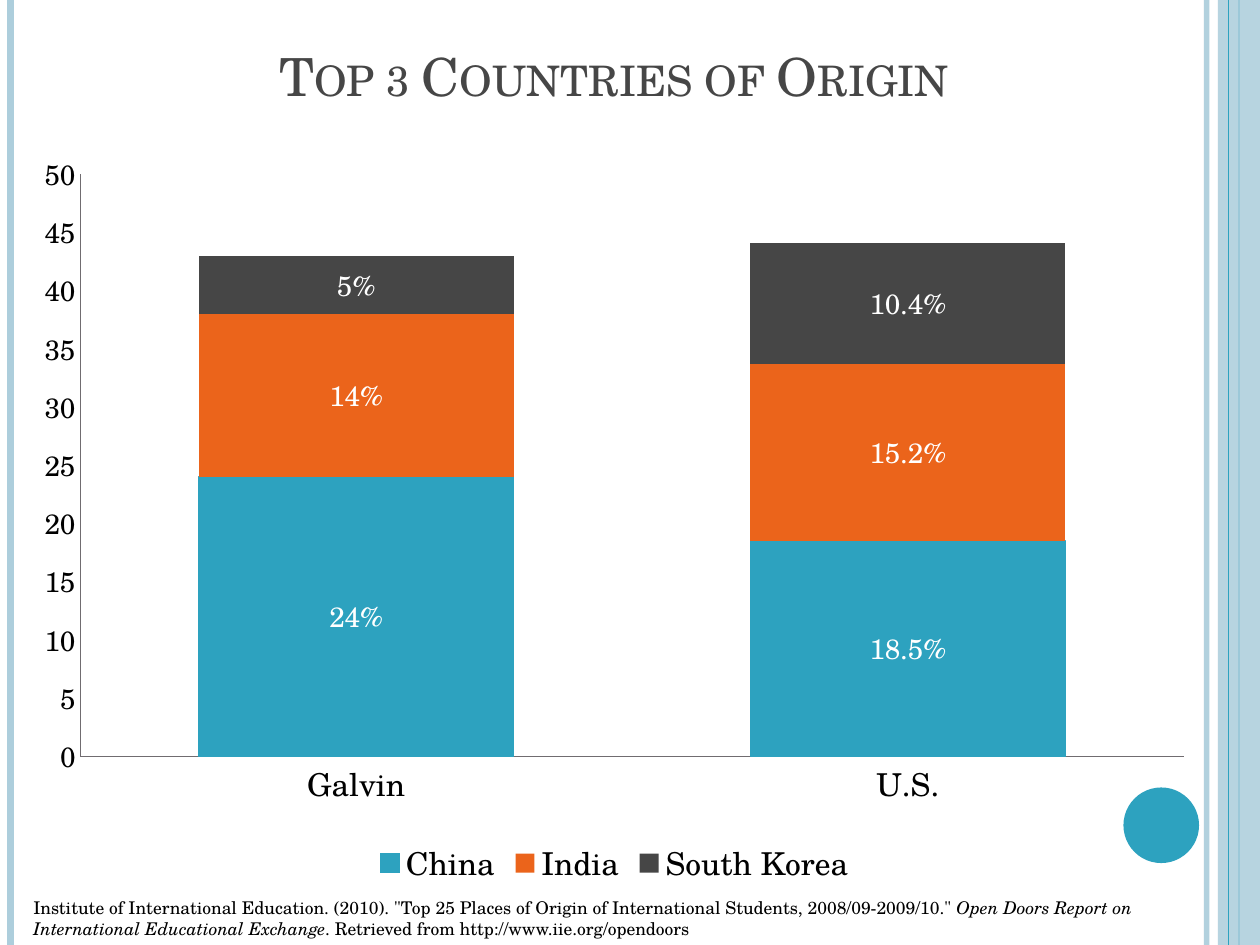
from lxml import etree
from pptx import Presentation
from pptx.chart.data import CategoryChartData
from pptx.dml.color import RGBColor
from pptx.enum import chart as charts, shapes, text
from pptx.oxml import parse_xml
from pptx.oxml.ns import nsdecls, qn
from pptx.util import Pt

FONT = "TeX Gyre Schola"
PALE = RGBColor(0xAD, 0xCE, 0xDC)
TEAL = RGBColor(0x2D, 0xA2, 0xBF)
ORANGE = RGBColor(0xEB, 0x64, 0x1B)
GREY = RGBColor(0x46, 0x46, 0x46)
AXIS = RGBColor(0x70, 0x6C, 0x70)
BLACK = RGBColor(0, 0, 0)
WHITE = RGBColor(0xFF, 0xFF, 0xFF)

WIDTH, HEIGHT = 720, 540
LEFT, CONTENT_WIDTH = 12, 678
TITLE = "Top 3 Countries of Origin"
CITATION = [
    ('Institute of International Education. (2010). "Top 25 Places of Origin of '
     'International Students, 2008/09-2009/10."\u00a0', False),
    ("Open Doors Report on International Educational Exchange", True),
    (". Retrieved from http://www.iie.org/opendoors", False),
]
SCHOOLS = ["Galvin", "U.S."]
COUNTRIES = [
    ("China", (24, 18.5), TEAL),
    ("India", (14, 15.2), ORANGE),
    ("South Korea", (5, 10.4), GREY),
]
PLOT = {"x": 0.05, "y": 0.05, "w": 0.93, "h": 0.77}
LEFT_STRIPES = [(689.5, PALE, 3, 93), (6, PALE, 4.5, 100), (708, TEAL, 1.5, 100)]
FRONT_STRIPES = [(702, TEAL, 0.75, 100)]


def set_opacity(fill_parent, percent):
    color = fill_parent.find(".//" + qn("a:srgbClr"))
    etree.SubElement(color, qn("a:alpha"), val=str(percent * 1000))


def add_stripe(page, x, color, weight, opacity):
    stripe = page.shapes.add_connector(
        shapes.MSO_CONNECTOR.STRAIGHT, Pt(x), 0, Pt(x), Pt(HEIGHT))
    stripe.line.color.rgb = color
    stripe.line.width = Pt(weight)
    properties = stripe._element.spPr
    if opacity < 100:
        set_opacity(properties, opacity)
    etree.SubElement(properties, qn("a:effectLst"))


def add_solid(page, kind, left, top, width, height, color):
    solid = page.shapes.add_shape(kind, Pt(left), Pt(top), Pt(width), Pt(height))
    solid.shadow.inherit = False
    solid.fill.solid()
    solid.fill.fore_color.rgb = color
    solid.line.fill.background()
    return solid


def add_text(page, top, height, spans, size, color, align):
    box = page.shapes.add_textbox(Pt(LEFT), Pt(top), Pt(CONTENT_WIDTH), Pt(height))
    box.text_frame.word_wrap = True
    para = box.text_frame.paragraphs[0]
    para.alignment = align
    style_font(para.font, size, color)
    for words, italic in spans:
        span = para.add_run()
        span.text = words
        if italic:
            span.font.italic = True
    return para


def style_font(font, size, color=BLACK):
    font.name = FONT
    font.size = Pt(size)
    font.color.rgb = color


def style_axis(axis, size):
    axis.has_major_gridlines = False
    axis.major_tick_mark = axis.minor_tick_mark = charts.XL_TICK_MARK.NONE
    axis.format.line.color.rgb = AXIS
    axis.format.line.width = Pt(0.75)
    style_font(axis.tick_labels.font, size)


def place_plot(chart):
    area = chart._chartSpace.chart.plotArea
    for layout in area.findall(qn("c:layout")):
        area.remove(layout)
    settings = '<c:layoutTarget val="inner"/><c:xMode val="edge"/><c:yMode val="edge"/>'
    settings += "".join(f'<c:{key} val="{value}"/>' for key, value in PLOT.items())
    area.insert(0, parse_xml(
        f'<c:layout {nsdecls("c")}><c:manualLayout>{settings}</c:manualLayout></c:layout>'))


def add_country_chart(page):
    data = CategoryChartData()
    data.categories = SCHOOLS
    for name, values, _ in COUNTRIES:
        data.add_series(name, values)
    chart = page.shapes.add_chart(
        charts.XL_CHART_TYPE.COLUMN_STACKED,
        Pt(LEFT), Pt(78), Pt(CONTENT_WIDTH), Pt(432), data).chart
    style_font(chart.font, 10)
    chart.has_title = False
    chart.has_legend = True
    chart.legend.position = charts.XL_LEGEND_POSITION.BOTTOM
    chart.legend.include_in_layout = False
    style_font(chart.legend.font, 18)
    style_axis(chart.category_axis, 18)
    style_axis(chart.value_axis, 16)
    chart.value_axis.minimum_scale = 0
    chart.value_axis.maximum_scale = 50
    chart.value_axis.major_unit = 5
    plot = chart.plots[0]
    plot.gap_width, plot.overlap = 75, 100
    plot.vary_by_categories = False
    for series, (_, _, color) in zip(plot.series, COUNTRIES):
        series.format.fill.solid()
        series.format.fill.fore_color.rgb = color
        labels = series.data_labels
        labels.show_value = True
        labels.number_format = 'General"%"'
        labels.number_format_is_linked = False
        labels.position = charts.XL_LABEL_POSITION.CENTER
        style_font(labels.font, 16, WHITE)
    china = plot.series[0]
    china.format.line.color.rgb = TEAL
    china.format.line.width = Pt(0.75)
    place_plot(chart)


def main():
    deck = Presentation()
    deck.slide_width, deck.slide_height = Pt(WIDTH), Pt(HEIGHT)
    page = deck.slides.add_slide(deck.slide_layouts[6])
    for stripe in LEFT_STRIPES:
        add_stripe(page, *stripe)
    band = add_solid(page, shapes.MSO_SHAPE.RECTANGLE, 696, 0, 24, HEIGHT, PALE)
    set_opacity(band._element.spPr, 87)
    for stripe in FRONT_STRIPES:
        add_stripe(page, *stripe)
    add_solid(page, shapes.MSO_SHAPE.OVAL, 642, 450, 43.2, 43.2, TEAL)
    title = add_text(page, 21.6, 90, [(TITLE, False)], 30, GREY, text.PP_ALIGN.CENTER)
    title.runs[0].font._element.set("cap", "small")
    add_country_chart(page)
    add_text(page, 509, 31.5, CITATION, 10, BLACK, text.PP_ALIGN.LEFT)
    deck.save("out.pptx")


if __name__ == "__main__":
    main()
